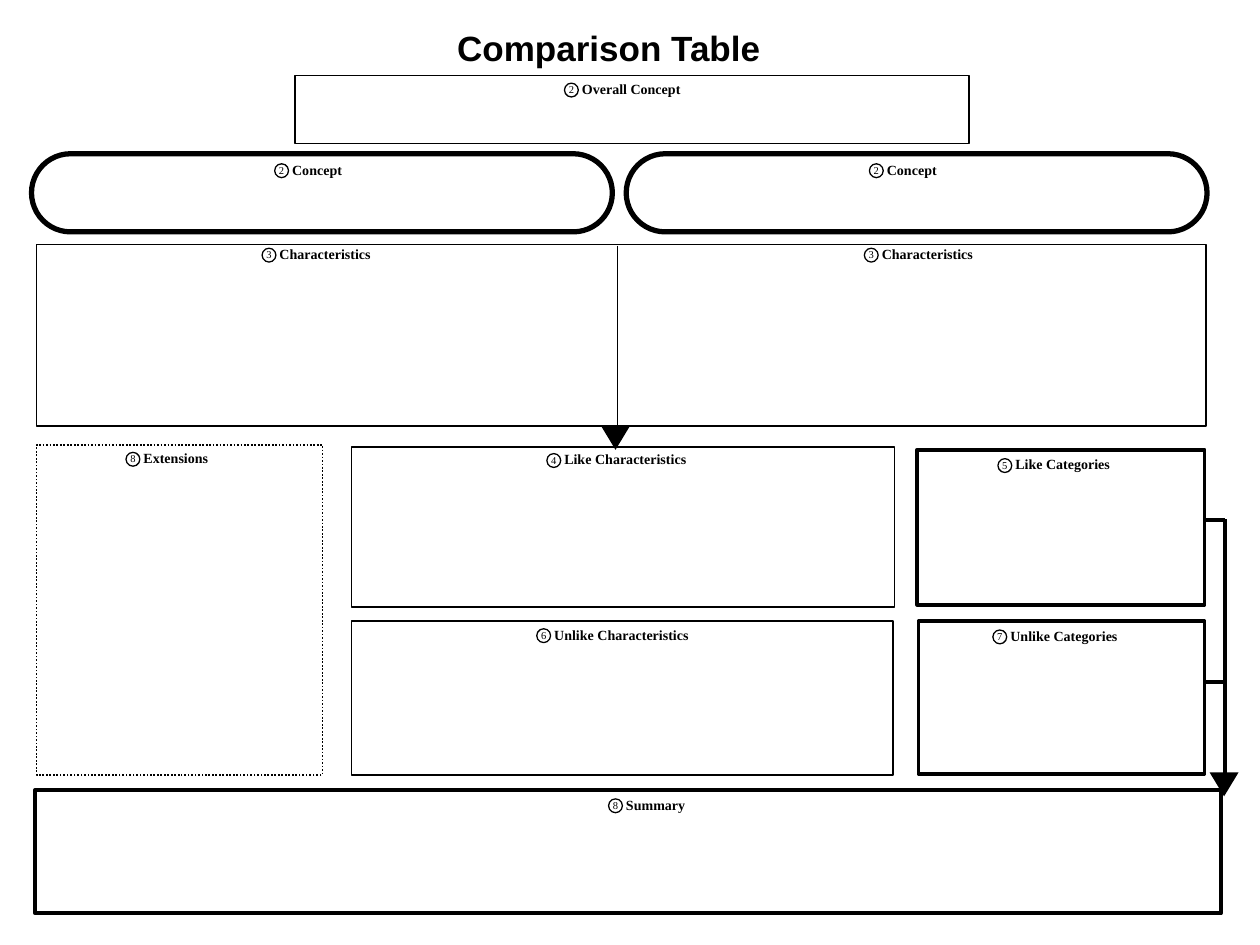
"""Build a one-slide comparison table organizer."""
from lxml.etree import SubElement
from pptx import Presentation
from pptx.dml.color import RGBColor
from pptx.enum.dml import MSO_LINE
from pptx.enum.shapes import MSO_CONNECTOR, MSO_SHAPE
from pptx.enum.text import PP_ALIGN
from pptx.oxml.ns import qn
from pptx.util import Inches, Pt

BLACK = RGBColor(0, 0, 0)
COLS, ROWS = 1000, 750
SERIF, SANS = "Times New Roman", "Arial"
RECT, PILL = MSO_SHAPE.RECTANGLE, MSO_SHAPE.ROUNDED_RECTANGLE
THIN, BOLD, THICK = 1, 2.25, 3

BOXES = [
    (RECT, THIN, (234, 60, 535, 54)),
    (PILL, THICK, (25, 122, 461, 62)),
    (PILL, THICK, (497, 122, 461, 62)),
    (RECT, THIN, (29, 194, 928, 144)),
    (RECT, THIN, (279, 355, 431, 127)),
    (RECT, THIN, (279, 493, 430, 122)),
    (RECT, BOLD, (728, 357, 228, 123)),
    (RECT, BOLD, (729, 493, 227, 121)),
    (RECT, BOLD, (28, 627, 941, 98)),
]
EXTRA = (29, 353, 227, 262)
LABELS = [
    ("2", "Overall Concept", 448, 66, 113),
    ("2", "Concept", 218, 130, 69),
    ("2", "Concept", 690, 130, 69),
    ("3", "Characteristics", 208, 197, 106),
    ("3", "Characteristics", 686, 197, 106),
    ("8", "Extensions", 100, 359, 83),
    ("4", "Like Characteristics", 434, 360, 135),
    ("6", "Unlike Characteristics", 426, 499, 146),
    ("5", "Like Categories", 792, 364, 110),
    ("7", "Unlike Categories", 788, 500, 121),
    ("8", "Summary", 483, 634, 77),
]
LINES = [
    (THIN, (490, 195, 490, 337)),
    (BOLD, (972, 412, 972, 617)),
    (BOLD, (957, 413, 972, 413)),
    (BOLD, (956, 541, 971, 541)),
]
HEADS = [(477, 338, 23, 19), (960, 613, 23, 19)]
RING = 11

deck = Presentation()
deck.slide_width, deck.slide_height = Inches(10), Inches(7.5)
slide = deck.slides.add_slide(deck.slide_layouts[6])
shapes = slide.shapes


def place(area):
    sizes = (deck.slide_width, deck.slide_height) * 2
    return [round(a * size / part)
            for a, size, part in zip(area, sizes, (COLS, ROWS) * 2)]


def draw(kind, area, width):
    shape = shapes.add_shape(kind, *place(area))
    shape.shadow.inherit = False
    shape.fill.background()
    shape.line.color.rgb = BLACK
    shape.line.width = Pt(width)
    if kind == PILL:
        shape.adjustments[0] = 0.5
    return shape


def write(text, area, size, face=SERIF, bold=True, tight=False):
    frame = shapes.add_textbox(*place(area)).text_frame
    frame.word_wrap = not tight
    frame.text = text
    para = frame.paragraphs[0]
    if tight:
        frame.margin_left = frame.margin_right = 0
        frame.margin_top = frame.margin_bottom = 0
        para.alignment = PP_ALIGN.CENTER
    font = para.runs[0].font
    font.name, font.size, font.bold = face, Pt(size), bold
    font.color.rgb = BLACK


for kind, width, area in BOXES:
    draw(kind, area, width)
draw(RECT, EXTRA, THIN).line.dash_style = MSO_LINE.ROUND_DOT

for width, ends in LINES:
    line = shapes.add_connector(MSO_CONNECTOR.STRAIGHT, *place(ends))
    line.line.color.rgb = BLACK
    line.line.width = Pt(width)
    SubElement(line._element.spPr, qn("a:effectLst"))

for area in HEADS:
    head = draw(MSO_SHAPE.ISOSCELES_TRIANGLE, area, THIN)
    head.rotation = 180
    head.fill.solid()
    head.fill.fore_color.rgb = BLACK
    head.line.fill.background()

write("Comparison Table", (353, 16, 303, 49), 20, SANS)
for mark, name, x, y, width in LABELS:
    write(mark, (x + 3, y, 5, RING), 6, bold=False, tight=True)
    draw(MSO_SHAPE.OVAL, (x, y, RING, RING), 0.75)
    write(name, (x + 4, y - 7, width, 26), 8)

deck.save("out.pptx")
